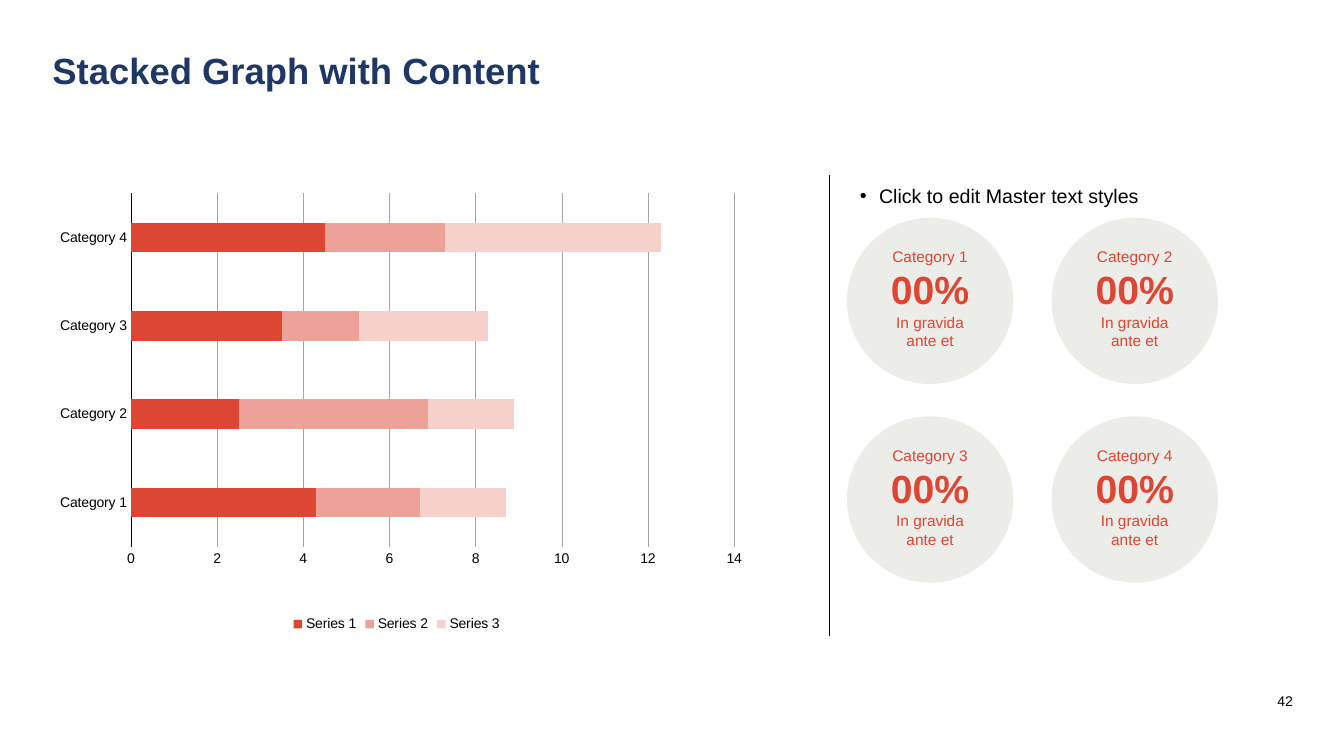
from itertools import product

from lxml import etree
from pptx import Presentation
from pptx.chart.data import CategoryChartData
from pptx.dml.color import RGBColor
from pptx.enum.chart import XL_CHART_TYPE, XL_LEGEND_POSITION, XL_TICK_MARK
from pptx.enum.shapes import MSO_CONNECTOR, MSO_SHAPE
from pptx.enum.text import MSO_ANCHOR, PP_ALIGN
from pptx.oxml import parse_xml
from pptx.oxml.ns import nsdecls, qn
from pptx.util import Inches, Pt

NAVY, RED, BLACK, GREY, STONE = "1E3765", "DC4633", "000000", "A6A6A6", "D0D1C9"
CATEGORIES = ["Category 1", "Category 2", "Category 3", "Category 4"]
SERIES = [
    ("Series 1", RED, (4.3, 2.5, 3.5, 4.5)),
    ("Series 2", "EDA299", (2.4, 4.4, 1.8, 2.8)),
    ("Series 3", "F6D1CC", (2, 2, 3, 5)),
]


def color(hex_string):
    return RGBColor.from_string(hex_string)


class SlideBuilder:
    font_name = "Arial"

    def __init__(self, slide):
        self.slide = slide
        self.shapes = slide.shapes

    def style_font(self, font, size, hex_color, bold=False):
        font.name, font.size, font.bold = self.font_name, Pt(size), bold
        font.color.rgb = color(hex_color)

    def style_line(self, line, hex_color, width):
        line.color.rgb = color(hex_color)
        line.width = Pt(width)

    def title(self, text, left, top, width, height):
        title = self.shapes.title
        title.left, title.top = Inches(left), Inches(top)
        title.width, title.height = Inches(width), Inches(height)
        frame = title.text_frame
        frame.text = text
        frame.vertical_anchor = MSO_ANCHOR.TOP
        paragraph = frame.paragraphs[0]
        paragraph.alignment = PP_ALIGN.LEFT
        paragraph.line_spacing = 0.9
        self.style_font(paragraph.runs[0].font, 26, NAVY, True)

    def text(self, text, left, top, width, height, size,
             align=PP_ALIGN.LEFT, anchor=MSO_ANCHOR.TOP, bullet=False):
        box = self.shapes.add_textbox(Inches(left), Inches(top), Inches(width), Inches(height))
        frame = box.text_frame
        frame.word_wrap = True
        frame.vertical_anchor = anchor
        frame.text = text
        paragraph = frame.paragraphs[0]
        paragraph.alignment = align
        if bullet:
            properties = paragraph._p.get_or_add_pPr()
            properties.set("marL", str(Inches(0.19)))
            properties.set("indent", str(-Inches(0.19)))
            etree.SubElement(properties, qn("a:buFont")).set("typeface", self.font_name)
            etree.SubElement(properties, qn("a:buChar")).set("char", "•")
        self.style_font(paragraph.runs[0].font, size, BLACK)

    def vertical_line(self, x, top, bottom):
        line = self.shapes.add_connector(
            MSO_CONNECTOR.STRAIGHT, Inches(x), Inches(top), Inches(x), Inches(bottom))
        self.style_line(line.line, BLACK, 0.75)
        etree.SubElement(line._element.spPr, qn("a:effectLst"))

    def circle(self, lines, left, top, diameter):
        """Add a translucent circle; lines are (text, size, bold)."""
        shape = self.shapes.add_shape(
            MSO_SHAPE.OVAL, Inches(left), Inches(top), Inches(diameter), Inches(diameter))
        shape.shadow.inherit = False
        shape.line.fill.background()
        shape.fill.solid()
        shape.fill.fore_color.rgb = color(STONE)
        fill_color = shape._element.spPr.find(".//" + qn("a:srgbClr"))
        etree.SubElement(fill_color, qn("a:alpha")).set("val", "40000")
        frame = shape.text_frame
        frame.word_wrap = True
        frame.vertical_anchor = MSO_ANCHOR.MIDDLE
        frame.margin_left = frame.margin_right = Inches(0.1)
        frame.margin_top, frame.margin_bottom = 0, Inches(0.05)
        frame.text = "\n".join(text for text, _, _ in lines)
        for paragraph, (_, size, bold) in zip(frame.paragraphs, lines):
            paragraph.alignment = PP_ALIGN.CENTER
            self.style_font(paragraph.runs[0].font, size, RED, bold)

    def stacked_bars(self, categories, series, left, top, width, height):
        data = CategoryChartData()
        data.categories = categories
        for name, _, values in series:
            data.add_series(name, values)
        chart = self.shapes.add_chart(
            XL_CHART_TYPE.BAR_STACKED, Inches(left), Inches(top),
            Inches(width), Inches(height), data).chart
        self.style_font(chart.font, 10, BLACK)
        chart.has_title = False
        chart.has_legend = True
        chart.legend.position = XL_LEGEND_POSITION.BOTTOM
        chart.legend.include_in_layout = False
        self.style_font(chart.legend.font, 10, BLACK)

        plot = chart.plots[0]
        plot.gap_width, plot.overlap, plot.vary_by_categories = 200, 100, False
        for plotted, (_, hex_color, _) in zip(plot.series, series):
            plotted.format.fill.solid()
            plotted.format.fill.fore_color.rgb = color(hex_color)

        for axis in (chart.category_axis, chart.value_axis):
            axis.major_tick_mark = axis.minor_tick_mark = XL_TICK_MARK.NONE
            self.style_font(axis.tick_labels.font, 10, BLACK)
        chart.category_axis.has_major_gridlines = False
        self.style_line(chart.category_axis.format.line, BLACK, 0.25)
        value_axis = chart.value_axis
        value_axis.minimum_scale, value_axis.maximum_scale, value_axis.major_unit = 0, 14, 2
        value_axis.format.line.fill.background()
        value_axis.has_major_gridlines = True
        self.style_line(value_axis.major_gridlines.format.line, GREY, 0.25)
        self.place_plot(chart, x=0.125, y=0.039, w=0.851, h=0.767)

    def place_plot(self, chart, **fractions):
        """Fix the inner plot area as fractions of the chart."""
        plot_area = chart._chartSpace.chart.plotArea
        for layout in plot_area.findall(qn("c:layout")):
            plot_area.remove(layout)
        modes = "".join(f'<c:{side}Mode val="edge"/>' for side in "xy")
        places = "".join(f'<c:{side} val="{value}"/>' for side, value in fractions.items())
        plot_area.insert(0, parse_xml(
            f'<c:layout {nsdecls("c")}><c:manualLayout><c:layoutTarget val="inner"/>'
            f"{modes}{places}</c:manualLayout></c:layout>"))


def main():
    presentation = Presentation()
    presentation.slide_width, presentation.slide_height = Inches(13.33), Inches(7.5)
    builder = SlideBuilder(presentation.slides.add_slide(presentation.slide_layouts[5]))

    builder.title("Stacked Graph with Content", 0.42, 0.48, 9.37, 1.08)
    builder.stacked_bars(CATEGORIES, SERIES, 0.42, 1.74, 7.03, 4.57)
    builder.vertical_line(8.23, 1.74, 6.31)
    builder.text("Click to edit Master text styles", 8.43, 1.78, 4.4, 0.35, 14, bullet=True)
    builder.text("42", 12.14, 6.81, 0.78, 0.29, 10, PP_ALIGN.RIGHT, MSO_ANCHOR.MIDDLE)
    for category, (row, column) in zip(CATEGORIES, product(range(2), repeat=2)):
        lines = [(category, 11, False), ("00%", 28, True), ("In gravida ante et", 11, False)]
        builder.circle(lines, 8.4 + 2.03 * column, 2.16 + 1.97 * row, 1.65)

    presentation.save("out.pptx")


if __name__ == "__main__":
    main()
